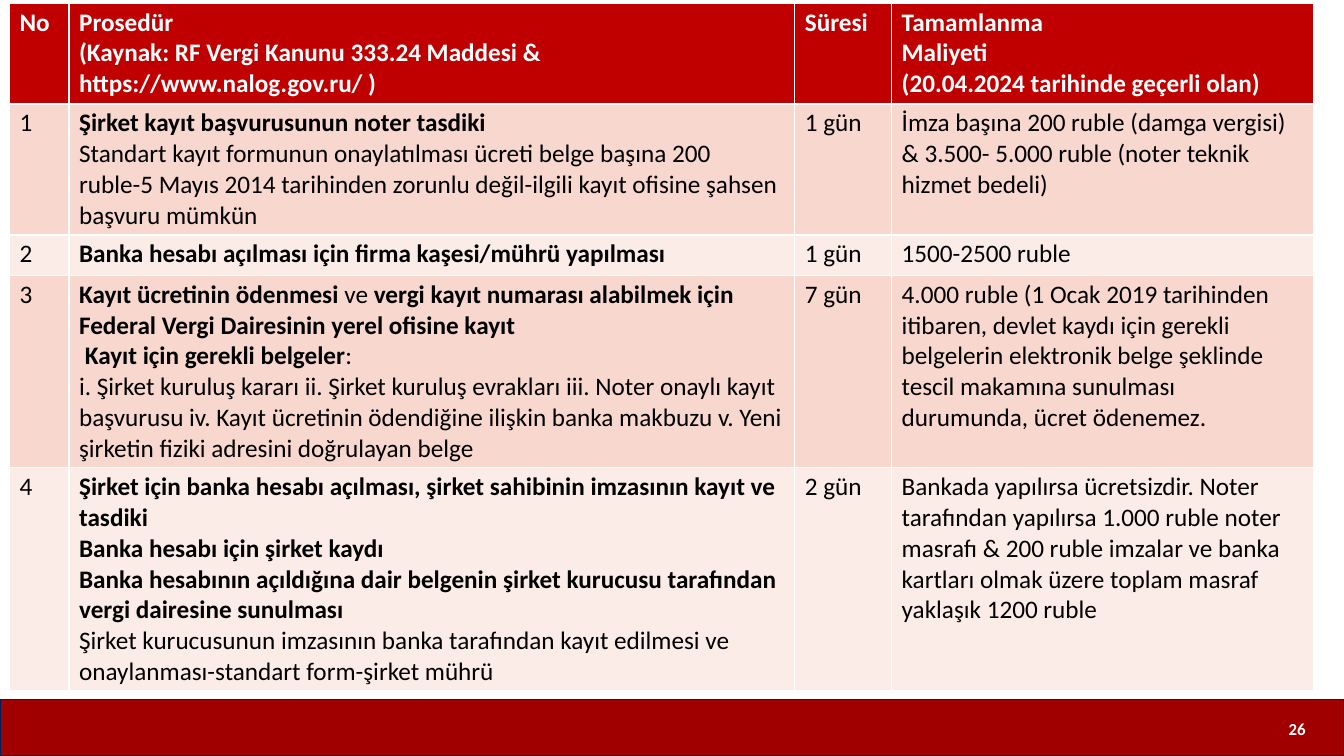
import pptx
import pptx.util
import pptx.dml.color
import pptx.enum.shapes
import pptx.enum.text

Cm = pptx.util.Cm
Pt = pptx.util.Pt
RGBColor = pptx.dml.color.RGBColor

WHITE = RGBColor(0xFF, 0xFF, 0xFF)
BLACK = RGBColor(0, 0, 0)
NAVY = RGBColor(0x00, 0x20, 0x60)
MAROON = RGBColor(0xA0, 0, 0)
RED = RGBColor(0xC0, 0, 0)
ROSE = RGBColor(0xF8, 0xD7, 0xCE)
BLUSH = RGBColor(0xFC, 0xEC, 0xE8)

WIDTHS = [1.5, 18.29, 2.44, 10.64]
HEIGHTS = [2.54, 3.3, 1.02, 4.85, 5.61]
ROWS = [
    [
        ["**No"],
        ["**Prosedür",
         "**(Kaynak: RF Vergi Kanunu 333.24 Maddesi & https://www.nalog.gov.ru/ )"],
        ["**Süresi"],
        ["**Tamamlanma", "**Maliyeti", "**(20.04.2024 tarihinde geçerli olan)"],
    ],
    [
        ["1"],
        ["**Şirket kayıt başvurusunun noter tasdiki",
         "Standart kayıt formunun onaylatılması ücreti belge başına 200 ruble-5 Mayıs 2014 "
         "tarihinden zorunlu değil-ilgili kayıt ofisine şahsen başvuru mümkün"],
        ["1 gün"],
        ["İmza başına 200 ruble (damga vergisi) & 3.500- 5.000 ruble (noter teknik hizmet bedeli)"],
    ],
    [
        ["2"],
        ["**Banka hesabı açılması için firma kaşesi/mührü yapılması"],
        ["1 gün"],
        ["1500-2500 ruble"],
    ],
    [
        ["3"],
        ["**Kayıt ücretinin ödenmesi **ve **vergi kayıt numarası alabilmek için "
         "Federal Vergi Dairesinin yerel ofisine kayıt",
         " **Kayıt için gerekli belgeler**:",
         "i. Şirket kuruluş kararı ii. Şirket kuruluş evrakları iii. Noter onaylı kayıt başvurusu "
         "iv. Kayıt ücretinin ödendiğine ilişkin banka makbuzu "
         "v. Yeni şirketin fiziki adresini doğrulayan belge"],
        ["7 gün"],
        ["4.000 ruble (1 Ocak 2019 tarihinden itibaren, devlet kaydı için gerekli belgelerin "
         "elektronik belge şeklinde tescil makamına sunulması durumunda, ücret ödenemez."],
    ],
    [
        ["4"],
        ["**Şirket için banka hesabı açılması, şirket sahibinin imzasının kayıt ve tasdiki",
         "**Banka hesabı için şirket kaydı",
         "**Banka hesabının açıldığına dair belgenin şirket kurucusu tarafından "
         "vergi dairesine sunulması",
         "Şirket kurucusunun imzasının banka tarafından kayıt edilmesi ve "
         "onaylanması-standart form-şirket mührü"],
        ["2 gün"],
        ["Bankada yapılırsa ücretsizdir. Noter tarafından yapılırsa 1.000 ruble noter masrafı "
         "& 200 ruble imzalar ve banka kartları olmak üzere toplam masraf yaklaşık 1200 ruble"],
    ],
]


def style(para, size, color):
    para.font.name = "Calibri"
    para.font.size = Pt(size)
    para.font.color.rgb = color


def write(para, text):
    parts = [(i % 2 == 1, part) for i, part in enumerate(text.split("**")) if part]
    for bold, part in parts:
        run = para.add_run()
        run.text = part
        if len(parts) > 1:
            run.font.bold = bold
    if len(parts) == 1:
        para.font.bold = parts[0][0]


deck = pptx.Presentation()
deck.slide_width = Cm(33.87)
deck.slide_height = Cm(19.05)
slide = deck.slides.add_slide(deck.slide_layouts[6])

bar = slide.shapes.add_shape(
    pptx.enum.shapes.MSO_SHAPE.RECTANGLE, Cm(0), Cm(17.62), Cm(33.87), Cm(1.43))
bar.shadow.inherit = False
bar.fill.solid()
bar.fill.fore_color.rgb = MAROON
bar.line.color.rgb = NAVY
bar.line.width = Pt(1)

number = slide.shapes.add_textbox(Cm(32.08), Cm(17.62), Cm(1.22), Cm(1.5))
frame = number.text_frame
frame.word_wrap = True
frame.vertical_anchor = pptx.enum.text.MSO_ANCHOR.MIDDLE
para = frame.paragraphs[0]
para.alignment = pptx.enum.text.PP_ALIGN.CENTER
style(para, 12, WHITE)
write(para, "**26")

table = slide.shapes.add_table(
    len(ROWS), len(WIDTHS), Cm(0.24), Cm(0.08), Cm(sum(WIDTHS)), Cm(sum(HEIGHTS))).table
for column, width in zip(table.columns, WIDTHS):
    column.width = Cm(width)
for r, (row, height) in enumerate(zip(ROWS, HEIGHTS)):
    table.rows[r].height = Cm(height)
    for c, texts in enumerate(row):
        cell = table.cell(r, c)
        cell.fill.solid()
        cell.fill.fore_color.rgb = RED if r == 0 else ROSE if r % 2 else BLUSH
        cell.margin_top = cell.margin_bottom = Cm(0.1)
        for p, text in enumerate(texts):
            body = cell.text_frame
            para = body.add_paragraph() if p else body.paragraphs[0]
            style(para, 18, BLACK if r else WHITE)
            write(para, text)

deck.save("out.pptx")
